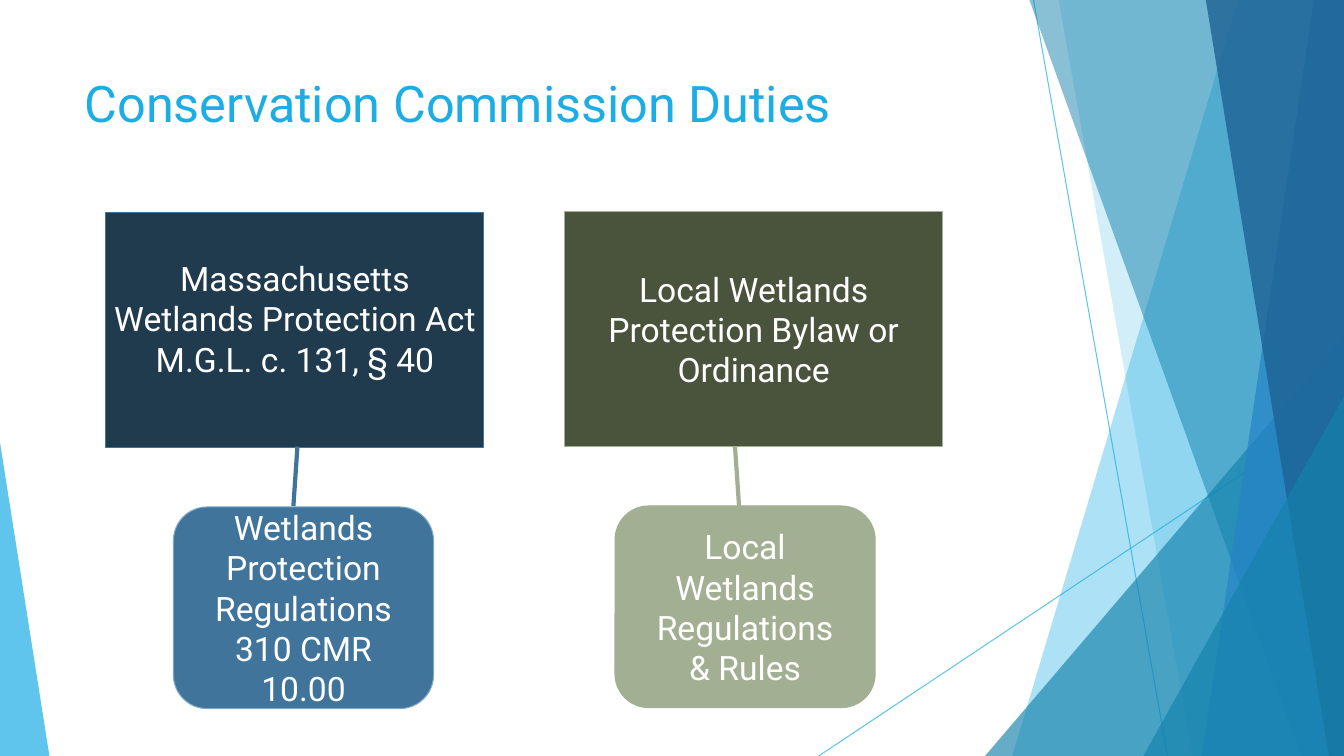
from lxml import etree
from pptx import Presentation
from pptx.dml.color import RGBColor
from pptx.enum.shapes import MSO_CONNECTOR, MSO_SHAPE
from pptx.enum.text import MSO_ANCHOR, PP_ALIGN
from pptx.oxml.ns import qn
from pptx.util import Inches, Pt

RECT = MSO_SHAPE.RECTANGLE
ROUNDED = MSO_SHAPE.ROUNDED_RECTANGLE
TRIANGLE = MSO_SHAPE.ISOSCELES_TRIANGLE
STRAIGHT = MSO_CONNECTOR.STRAIGHT
CENTER = PP_ALIGN.CENTER
TOP, MIDDLE = MSO_ANCHOR.TOP, MSO_ANCHOR.MIDDLE

FONT = "Roboto"
WIDTH, HEIGHT = 13.33, 7.5
WHITE, SKY, TEAL = "FFFFFF", "1CADE4", "1482AC"
NAVY, BLUE, PALE_BLUE = "203A4E", "40749B", "7EA9CA"
OLIVE, SAGE = "4A543D", "A2AF92"


def set_color(fmt, color, opacity=100):
    """Apply a solid colour to a fill or a line, with opacity in percent."""
    fill = getattr(fmt, "fill", fmt)
    fill.solid()
    fill.fore_color.rgb = RGBColor.from_string(color)
    if opacity < 100:
        clr = fill._xPr.find(qn("a:solidFill"))[0]
        etree.SubElement(clr, qn("a:alpha"), val=str(opacity * 1000))


def add_line(s, start, end, color, width, opacity=100):
    ends = [Inches(v) for v in (*start, *end)]
    line = s.shapes.add_connector(STRAIGHT, *ends)
    set_color(line.line, color, opacity)
    line.line.width = Pt(width)
    etree.SubElement(line._element.spPr, qn("a:effectLst"))


def style_facet(sp, color, opacity):
    set_color(sp.fill, color, opacity)
    sp.line.fill.background()
    sp.shadow.inherit = False


def add_band(s, top_x, bottom_x, color, opacity):
    """Fill from a slanted left edge to the right side of the slide."""
    builder = s.shapes.build_freeform(Inches(top_x), 0)
    corners = [(WIDTH, 0), (WIDTH, HEIGHT), (bottom_x, HEIGHT)]
    builder.add_line_segments([(Inches(x), Inches(y)) for x, y in corners])
    style_facet(builder.convert_to_shape(), color, opacity)


def add_corner(s, left, top, width, apex, color, opacity):
    """Add a right triangle on the bottom edge; apex 0 is left, 1 is right."""
    sp = s.shapes.add_shape(TRIANGLE, Inches(left), Inches(top),
                            Inches(width), Inches(HEIGHT - top))
    sp.adjustments[0] = apex
    style_facet(sp, color, opacity)


def write(tf, lines, size, color, anchor, align=None):
    tf.word_wrap = True
    tf.vertical_anchor = anchor
    for i, text in enumerate(lines):
        p = tf.add_paragraph() if i else tf.paragraphs[0]
        p.text = text
        p.alignment = align
        p.font.name = FONT
        p.font.size = Pt(size)
        p.font.color.rgb = RGBColor.from_string(color)


def add_box(s, kind, left, top, size, fill, outline, lines, side=0.05, bottom=0):
    """Add a labelled box; side and bottom are the text insets."""
    sp = s.shapes.add_shape(kind, Inches(left), Inches(top),
                            *[Inches(v) for v in size])
    sp.shadow.inherit = False
    set_color(sp.fill, fill)
    set_color(sp.line, outline)
    sp.line.width = Pt(0.75)
    tf = sp.text_frame
    tf.margin_left = tf.margin_right = Inches(side)
    tf.margin_top, tf.margin_bottom = 0, Inches(bottom)
    write(tf, lines, 24, WHITE, MIDDLE, CENTER)


def add_background(s):
    add_line(s, (10.25, 0), (11.58, HEIGHT), SKY, 0.75, 70)
    add_line(s, (WIDTH, 4.03), (8.12, HEIGHT), SKY, 0.75, 70)
    add_band(s, 12.28, 10.04, SKY, 36)
    add_band(s, 10.5, 11.83, SKY, 20)
    add_corner(s, 9.77, 3.33, 3.56, 1, TEAL, 66)
    add_band(s, 10.21, 12.91, TEAL, 50)
    add_band(s, 13.03, 11.92, "2683C6", 70)
    add_band(s, 11.96, 13.18, "1D6294", 80)
    add_corner(s, 11.34, 3.93, 1.99, 1, TEAL, 66)
    add_corner(s, 0, 4.39, 0.49, 0, SKY, 70)


def add_title(s, text):
    box = s.shapes.add_textbox(Inches(0.74), Inches(0.67), Inches(9.4), Inches(1.44))
    write(box.text_frame, [text], 36, SKY, TOP)


def main():
    prs = Presentation()
    prs.slide_width, prs.slide_height = Inches(WIDTH), Inches(HEIGHT)
    s = prs.slides.add_slide(prs.slide_layouts[6])
    add_background(s)
    add_title(s, "Conservation Commission Duties")

    law, rules = (3.75, 2.33), (2.58, 2)
    add_box(s, RECT, 1.05, 2.11, law, NAVY, BLUE,
            ["Massachusetts Wetlands Protection Act", "M.G.L. c. 131, § 40"],
            bottom=0.23)
    add_box(s, ROUNDED, 1.72, 5.03, rules, BLUE, PALE_BLUE,
            ["Wetlands Protection Regulations", "310 CMR 10.00"], side=0.12)
    add_line(s, (2.95, 4.43), (2.91, 5.02), BLUE, 3)

    add_box(s, RECT, 5.6, 2.1, law, OLIVE, SAGE,
            ["Local Wetlands Protection Bylaw or Ordinance"])
    add_box(s, ROUNDED, 6.1, 5.02, rules, SAGE, SAGE,
            ["Local", "Wetlands Regulations", "& Rules"], side=0.12)
    add_line(s, (7.29, 4.43), (7.33, 5.02), SAGE, 3)
    prs.save("out.pptx")


if __name__ == "__main__":
    main()
